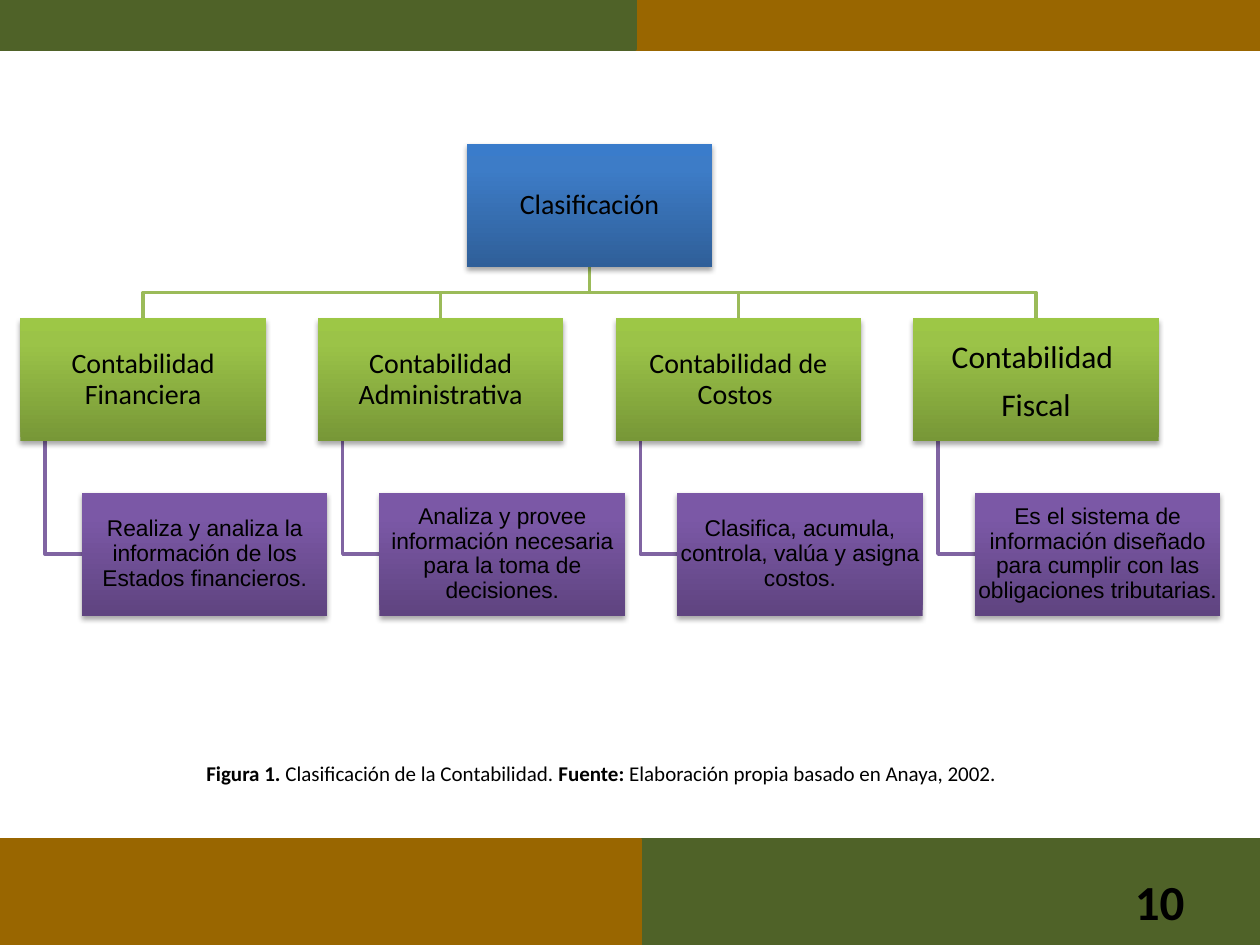
from lxml import etree
from pptx import Presentation
from pptx.dml.color import RGBColor
from pptx.enum.shapes import MSO_SHAPE
from pptx.enum.text import MSO_ANCHOR, PP_ALIGN
from pptx.oxml import parse_xml
from pptx.oxml.ns import qn
from pptx.util import Cm, Pt

RECTANGLE = MSO_SHAPE.RECTANGLE
MIDDLE = MSO_ANCHOR.MIDDLE
LEFT, CENTER, RIGHT = PP_ALIGN.LEFT, PP_ALIGN.CENTER, PP_ALIGN.RIGHT

BLACK = RGBColor(0x00, 0x00, 0x00)
OLIVE = RGBColor(0x4F, 0x62, 0x28)
BROWN = RGBColor(0x99, 0x66, 0x00)
GREEN_LINE = RGBColor(0x9B, 0xBB, 0x59)
PURPLE_LINE = RGBColor(0x80, 0x64, 0xA2)

# Gradient colours from the bottom edge to the top edge
STOPS = (0, 80, 100)
BLUE = [RGBColor(0x2F, 0x5F, 0x99), RGBColor(0x3D, 0x7C, 0xC7), RGBColor(0x3A, 0x7C, 0xCB)]
GREEN = [RGBColor(0x77, 0x97, 0x37), RGBColor(0x9B, 0xC3, 0x48), RGBColor(0x9D, 0xC7, 0x46)]
PURPLE = [RGBColor(0x5F, 0x44, 0x80), RGBColor(0x7B, 0x58, 0xA6), RGBColor(0x7C, 0x57, 0xA8)]

ROOT = "Clasificación"
# (heading paragraphs, heading size, line spacing, description)
BRANCHES = [
    (["Contabilidad Financiera"], 16, 0.9,
     "Realiza y analiza la información de los Estados financieros."),
    (["Contabilidad Administrativa"], 16, 0.9,
     "Analiza y provee información necesaria para la toma de decisiones."),
    (["Contabilidad de Costos "], 16, 0.9,
     "Clasifica, acumula, controla, valúa y asigna costos."),
    (["Contabilidad ", "Fiscal"], 18, 1.0,
     "Es el sistema de información diseñado para cumplir con las obligaciones tributarias."),
]
CAPTION = [
    ("Figura 1. ", True),
    ("Clasificación de la Contabilidad. ", False),
    ("Fuente: ", True),
    ("Elaboración propia basado en Anaya, 2002.", False),
]
PAGE_NUMBER = "10"
# (left, top, width, height, colour) in cm, back to front
BARS = [
    (12.55, 16.92, 12.9, 2.13, OLIVE),
    (12.5, 0, 12.9, 0.99, BROWN),
    (0, 16.92, 12.9, 2.13, BROWN),
    (-0.1, 0, 12.9, 0.99, OLIVE),
]

# Chart layout in cm
BOX_WIDTH, BOX_HEIGHT = 4.95, 2.48
FIRST_LEFT, COLUMN_STEP = 0.41, 6.0
ROOT_TOP, HEADING_TOP, DETAIL_TOP = 2.9, 6.42, 9.93
DETAIL_INDENT, STEM_INDENT = 1.24, 0.5


def apply_gradient(shape, colours):
    shape.fill.gradient()
    shape.fill.gradient_angle = 90
    stop_list = shape._element.spPr.find(qn("a:gradFill")).find(qn("a:gsLst"))
    for stop in list(stop_list):
        stop_list.remove(stop)
    for percent, colour in zip(STOPS, colours):
        stop = etree.SubElement(stop_list, qn("a:gs"), pos=str(percent * 1000))
        etree.SubElement(stop, qn("a:srgbClr"), val=str(colour))


def apply_shadow(shape):
    shape._element.spPr.append(parse_xml(
        '<a:effectLst xmlns:a="http://schemas.openxmlformats.org/drawingml/2006/main">'
        f'<a:outerShdw blurRad="{Pt(3.1)}" dist="{Pt(1.8)}" dir="5400000" rotWithShape="0">'
        '<a:srgbClr val="000000"><a:alpha val="35000"/></a:srgbClr>'
        '</a:outerShdw></a:effectLst>'))


def format_paragraph(para, font_name, size, align):
    para.alignment = align
    para.font.name = font_name
    para.font.size = Pt(size)
    para.font.color.rgb = BLACK


def add_box(page, left, top, texts, colours, font_name, size, spacing=0.9):
    box = page.shapes.add_shape(
        RECTANGLE, Cm(left), Cm(top), Cm(BOX_WIDTH), Cm(BOX_HEIGHT))
    apply_gradient(box, colours)
    box.line.fill.background()
    apply_shadow(box)
    frame = box.text_frame
    frame.word_wrap = True
    frame.vertical_anchor = MIDDLE
    frame.margin_left = frame.margin_right = Cm(0.03)
    frame.margin_top = frame.margin_bottom = Cm(0.03)
    frame.text = "\n".join(texts)
    for para in frame.paragraphs:
        format_paragraph(para, font_name, size, CENTER)
        para.line_spacing = spacing
        para.space_after = Pt(round(size * 0.35, 1))


def add_elbow(page, points, colour):
    start, *rest = [(Cm(x), Cm(y)) for x, y in points]
    builder = page.shapes.build_freeform(*start)
    builder.add_line_segments(rest, close=False)
    elbow = builder.convert_to_shape()
    elbow.fill.background()
    elbow.line.color.rgb = colour
    elbow.line.width = Pt(2)
    elbow.shadow.inherit = False


def add_chart_tree(page):
    lefts = [FIRST_LEFT + COLUMN_STEP * i for i in range(len(BRANCHES))]
    root_left = (lefts[0] + lefts[-1]) / 2
    root_center = root_left + BOX_WIDTH / 2
    root_bottom = ROOT_TOP + BOX_HEIGHT
    middle = (root_bottom + HEADING_TOP) / 2
    detail_middle = DETAIL_TOP + BOX_HEIGHT / 2

    for left in reversed(lefts):
        stem = left + STEM_INDENT
        center = left + BOX_WIDTH / 2
        add_elbow(page, [(stem, HEADING_TOP + BOX_HEIGHT), (stem, detail_middle),
                         (left + DETAIL_INDENT, detail_middle)], PURPLE_LINE)
        add_elbow(page, [(root_center, root_bottom), (root_center, middle),
                         (center, middle), (center, HEADING_TOP)], GREEN_LINE)

    add_box(page, root_left, ROOT_TOP, [ROOT], BLUE, "Calibri", 16)
    for left, (heading, size, spacing, detail) in zip(lefts, BRANCHES):
        add_box(page, left, HEADING_TOP, heading, GREEN, "Calibri", size, spacing)
        add_box(page, left + DETAIL_INDENT, DETAIL_TOP, [detail], PURPLE, "Arial", 13)


def add_bars(page):
    for left, top, width, height, colour in BARS:
        bar = page.shapes.add_shape(RECTANGLE, Cm(left), Cm(top), Cm(width), Cm(height))
        bar.fill.solid()
        bar.fill.fore_color.rgb = colour
        bar.line.color.rgb = colour
        bar.line.width = Pt(2)
        bar.shadow.inherit = False


def add_label(page, left, top, width, height, spans, size, align):
    box = page.shapes.add_textbox(Cm(left), Cm(top), Cm(width), Cm(height))
    box.text_frame.word_wrap = True
    box.text_frame.vertical_anchor = MIDDLE
    para = box.text_frame.paragraphs[0]
    format_paragraph(para, "Calibri", size, align)
    for text, bold in spans:
        span = para.add_run()
        span.text = text
        span.font.bold = bold


def main():
    deck = Presentation()
    deck.slide_width, deck.slide_height = Cm(25.4), Cm(19.05)
    page = deck.slides.add_slide(deck.slide_layouts[6])
    add_chart_tree(page)
    add_bars(page)
    add_label(page, 3.91, 15.21, 17.2, 0.76, CAPTION, 12, LEFT)
    add_label(page, 18.2, 17.65, 5.93, 1.02, [(PAGE_NUMBER, True)], 28, RIGHT)
    deck.save("out.pptx")


if __name__ == "__main__":
    main()
